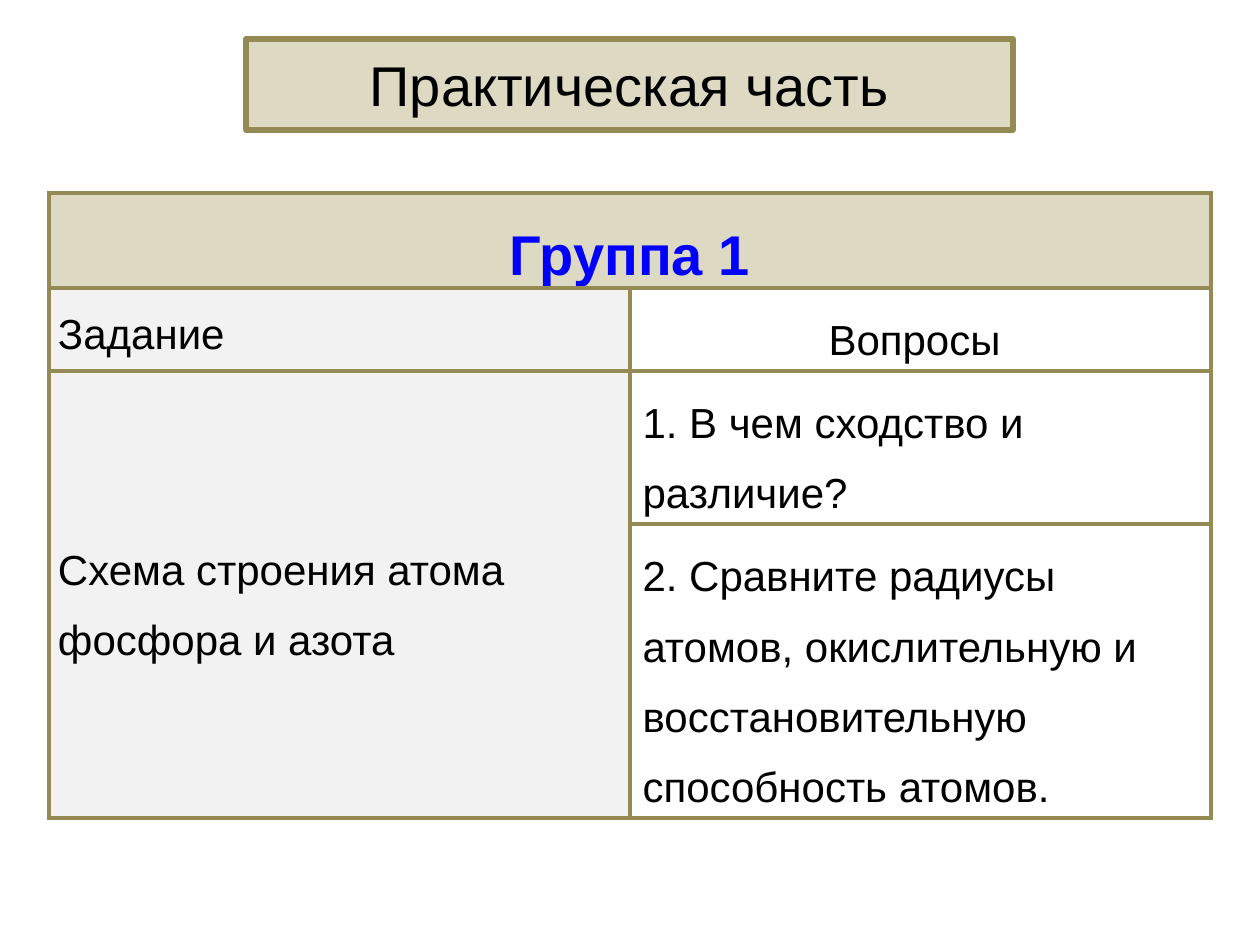
"""Build the practical-part slide: a title plate above a task and question table."""
from lxml.etree import SubElement
from pptx import Presentation
from pptx.dml.color import RGBColor
from pptx.enum.shapes import MSO_SHAPE as SHAPE
from pptx.enum.text import MSO_ANCHOR as ANCHOR, PP_ALIGN as ALIGN
from pptx.oxml.ns import qn
from pptx.util import Pt

PX = 914400 // 126
COLORS = {"sand": "DDD9C3", "olive": "948A54", "grey": "F2F2F2",
          "blue": "0000FF", "black": "000000"}
FONT = "Arial"
TITLE = "Практическая часть"
TITLE_BOX = (246, 39, 767, 91)
TABLE_LEFT, TABLE_TOP = 49, 193
COLUMNS = [581, 581]
ROWS = [95, 83, 153, 294]
BORDER = Pt(2.25)
MERGES = [((0, 0), (0, 1)), ((2, 0), (3, 0))]
CELLS = [
    (0, 0, "Группа 1", ALIGN.CENTER, "sand"),
    (1, 0, "Задание", ALIGN.JUSTIFY, "grey"),
    (1, 1, "Вопросы ", ALIGN.CENTER, None),
    (2, 0, "Схема строения атома фосфора и азота", ALIGN.LEFT, "grey"),
    (2, 1, "1. В чем сходство и различие?", ALIGN.LEFT, None),
    (3, 1, "2. Сравните радиусы атомов, окислительную и восстановительную "
           "способность атомов.", ALIGN.LEFT, None),
]


def rgb(name):
    return RGBColor.from_string(COLORS[name])


def px(*values):
    return [v * PX for v in values]


def write(tf, text, size, color, align, bold=False, spacing=None):
    p = tf.paragraphs[0]
    p.text, p.alignment, p.line_spacing = text, align, spacing
    font = p.runs[0].font
    font.name, font.size, font.bold = FONT, Pt(size), bold
    font.color.rgb = rgb(color)


def add_borders(cell):
    tc_pr = cell._tc.get_or_add_tcPr()
    for i, side in enumerate(("lnL", "lnR", "lnT", "lnB")):
        ln = tc_pr.makeelement(qn(f"a:{side}"), {"w": str(BORDER)})
        fill = SubElement(ln, qn("a:solidFill"))
        SubElement(fill, qn("a:srgbClr"), val=COLORS["olive"])
        tc_pr.insert(i, ln)


def add_title(s):
    sp = s.shapes.add_shape(SHAPE.ROUNDED_RECTANGLE, *px(*TITLE_BOX))
    sp.adjustments[0] = 0
    sp.shadow.inherit = False
    sp.fill.solid()
    sp.fill.fore_color.rgb = rgb("sand")
    sp.line.color.rgb = rgb("olive")
    sp.line.width = Pt(3)
    sp.text_frame.vertical_anchor = ANCHOR.MIDDLE
    write(sp.text_frame, TITLE, 32, "black", ALIGN.CENTER)


def add_tasks(s):
    box = px(TABLE_LEFT, TABLE_TOP, sum(COLUMNS), sum(ROWS))
    table = s.shapes.add_table(len(ROWS), len(COLUMNS), *box).table
    table.horz_banding = table.first_row = False
    for column, width in zip(table.columns, px(*COLUMNS)):
        column.width = width
    for row, height in zip(table.rows, px(*ROWS)):
        row.height = height
    for first, last in MERGES:
        table.cell(*first).merge(table.cell(*last))
    for cell in table.iter_cells():
        cell.fill.background()
        add_borders(cell)
    for r, c, text, align, fill in CELLS:
        cell = table.cell(r, c)
        if fill:
            cell.fill.solid()
            cell.fill.fore_color.rgb = rgb(fill)
            cell.margin_left = cell.margin_right = 9 * PX
            cell.margin_top = cell.margin_bottom = 0
        heading = r == 0
        write(cell.text_frame, text, 32 if heading else 24,
              "blue" if heading else "black", align, heading, 1.5)
    table.cell(2, 0).vertical_anchor = ANCHOR.MIDDLE


def main():
    prs = Presentation()
    prs.slide_width, prs.slide_height = px(1260, 945)
    s = prs.slides.add_slide(prs.slide_layouts[6])
    add_title(s)
    add_tasks(s)
    prs.save("out.pptx")


if __name__ == "__main__":
    main()
